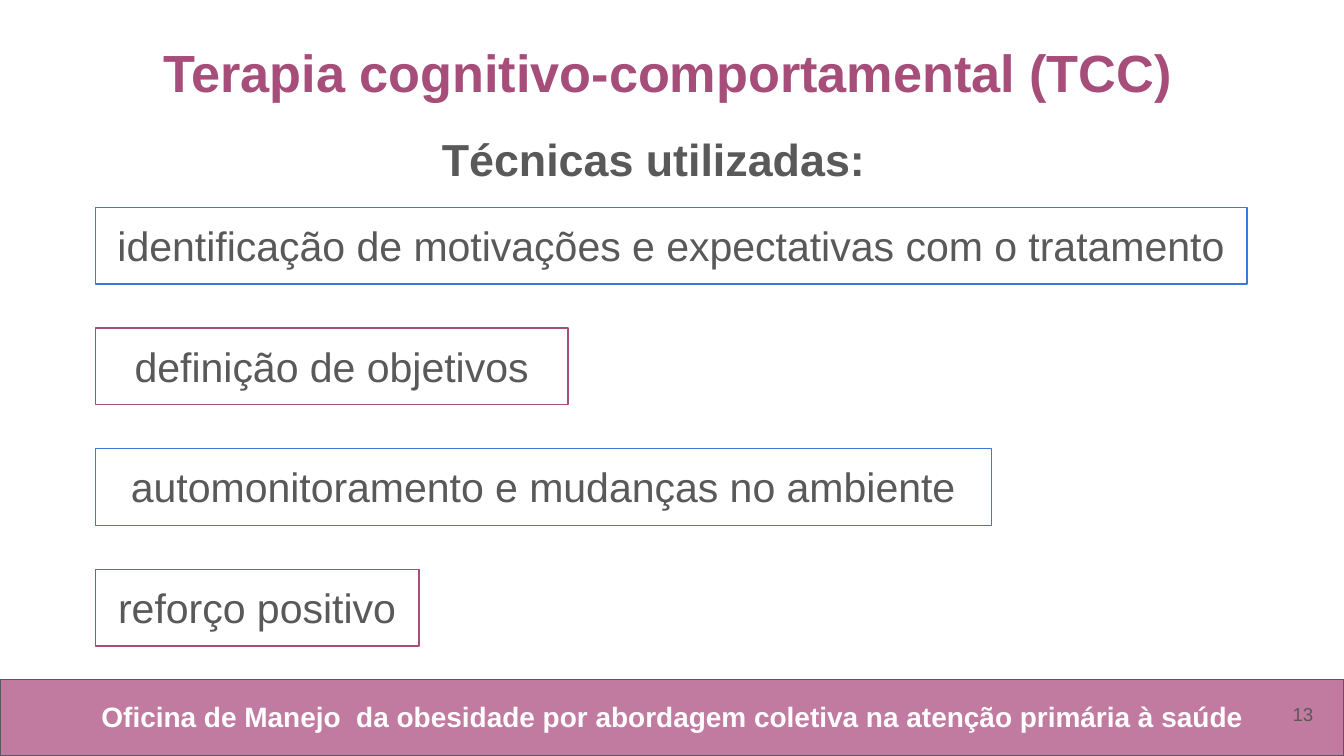
from pptx import Presentation
from pptx.dml.color import RGBColor
from pptx.enum.shapes import MSO_SHAPE
from pptx.enum.text import MSO_ANCHOR, PP_ALIGN
from pptx.util import Cm, Pt

RECTANGLE = MSO_SHAPE.RECTANGLE
TOP, MIDDLE = MSO_ANCHOR.TOP, MSO_ANCHOR.MIDDLE
LEFT, CENTER, RIGHT, JUSTIFY = PP_ALIGN.LEFT, PP_ALIGN.CENTER, PP_ALIGN.RIGHT, PP_ALIGN.JUSTIFY

COLORS = {"plum": "A64D79", "pink": "C27BA0", "blue": "3C78D8", "gray": "595959", "white": "FFFFFF"}
FONT = "Arial"

TITLE = "Terapia cognitivo-comportamental (TCC)"
SUBTITLE = "Técnicas utilizadas:"
TECHNIQUES = [
    ("identificação de motivações e expectativas com o tratamento", 21.77),
    ("definição de objetivos", 8.94),
    ("automonitoramento e mudanças no ambiente", 16.94),
    ("reforço positivo", 6.12),
]
FOOTER = "Oficina de Manejo  da obesidade por abordagem coletiva na atenção primária à saúde"
PAGE_NUMBER = "13"

SLIDE_WIDTH, SLIDE_HEIGHT = 25.4, 14.29
BAND_HEIGHT = 1.45
TECHNIQUE_LEFT, TECHNIQUE_TOP, TECHNIQUE_PITCH = 1.8, 3.92, 2.28
INSET = 0.25


def color(name):
    return RGBColor.from_string(COLORS[name])


def write(shape, text, size, ink, align, bold=False, anchor=TOP):
    frame = shape.text_frame
    frame.word_wrap = True
    frame.vertical_anchor = anchor
    frame.margin_left = frame.margin_right = Cm(INSET)
    frame.margin_top = frame.margin_bottom = Cm(INSET)
    paragraph = frame.paragraphs[0]
    paragraph.text = text
    paragraph.alignment = align
    font = paragraph.font
    font.name, font.size, font.bold = FONT, Pt(size), bold
    font.color.rgb = color(ink)
    return paragraph


def add_text(slide, box, *style, **options):
    return write(slide.shapes.add_textbox(*map(Cm, box)), *style, **options)


def add_box(slide, box, outline, fill=None):
    shape = slide.shapes.add_shape(RECTANGLE, *map(Cm, box))
    shape.shadow.inherit = False
    if fill:
        shape.fill.solid()
        shape.fill.fore_color.rgb = color(fill)
    else:
        shape.fill.background()
    shape.line.color.rgb = color(outline)
    shape.line.width = Pt(0.75)
    return shape


def main():
    deck = Presentation()
    deck.slide_width, deck.slide_height = Cm(SLIDE_WIDTH), Cm(SLIDE_HEIGHT)
    slide = deck.slides.add_slide(deck.slide_layouts[6])

    add_box(slide, (0, SLIDE_HEIGHT - BAND_HEIGHT, SLIDE_WIDTH, BAND_HEIGHT), "gray", "pink")
    add_text(slide, (0.86, 12.98, 23.7, 1.14), FOOTER, 15, "white", CENTER, bold=True)
    add_text(slide, (2.84, 0.51, 20, 1.6), TITLE, 28, "plum", LEFT, bold=True)
    subtitle = add_text(slide, (8.1, 2.08, 9.2, 1.6), SUBTITLE, 24, "gray", JUSTIFY, bold=True)
    subtitle.line_spacing = 1.15

    for row, (technique, width) in enumerate(TECHNIQUES):
        top = TECHNIQUE_TOP + row * TECHNIQUE_PITCH
        outline = ("blue", "plum")[row % 2]
        frame = add_box(slide, (TECHNIQUE_LEFT, top, width, BAND_HEIGHT), outline)
        write(frame, technique, 22, "gray", CENTER)

    add_text(slide, (23.55, 12.95, 1.52, 1.09), PAGE_NUMBER, 10, "gray", RIGHT, anchor=MIDDLE)
    deck.save("out.pptx")


if __name__ == "__main__":
    main()
